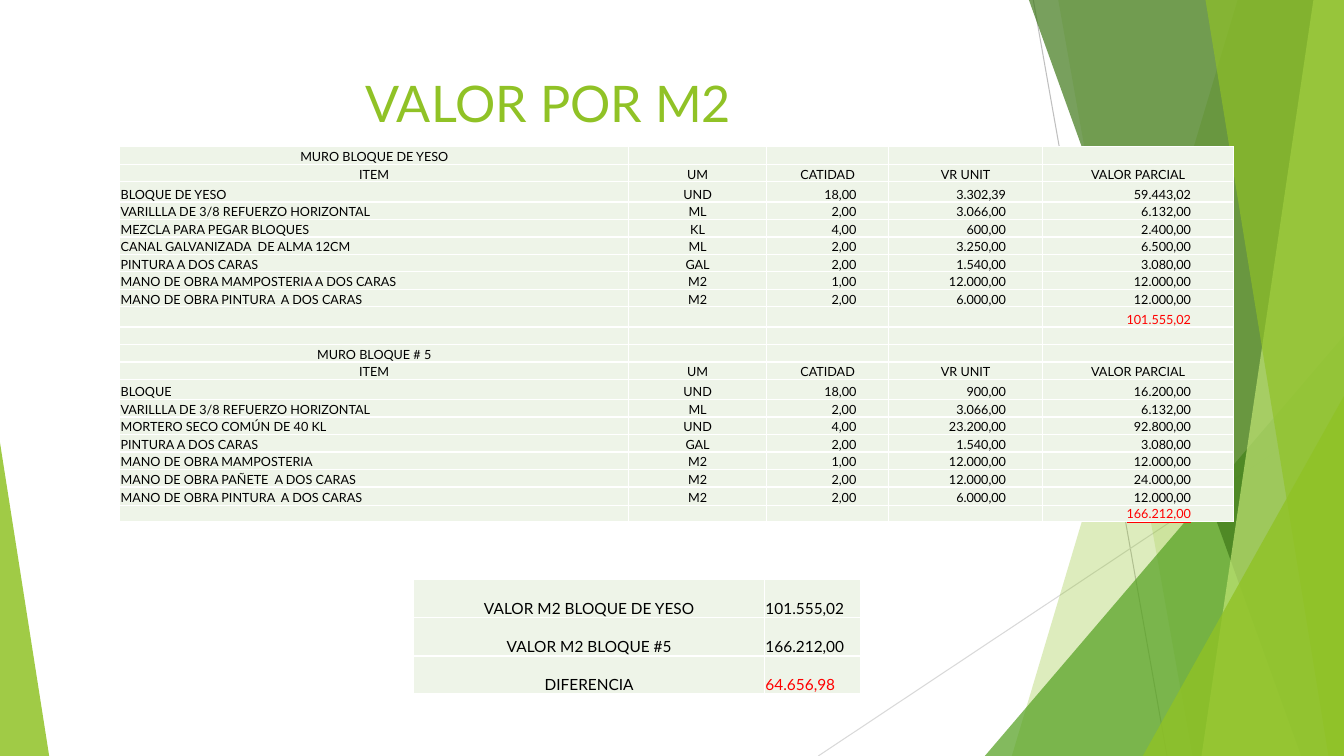
"""Build the slide that compares the cost per square metre of two wall types."""
from lxml.etree import SubElement
from pptx import Presentation
from pptx.dml.color import RGBColor
from pptx.enum.shapes import MSO_CONNECTOR, MSO_SHAPE
from pptx.enum.text import MSO_ANCHOR, PP_ALIGN
from pptx.oxml.ns import qn
from pptx.util import Cm, Pt

GREEN, RED, BLACK, PALE = "90C226", "FF0000", "000000", "EEF4E8"
WIDTH, HEIGHT = 33.87, 19.05
LEFT, CENTER, RIGHT = PP_ALIGN.LEFT, PP_ALIGN.CENTER, PP_ALIGN.RIGHT


def colour(hex_code):
    return RGBColor.from_string(hex_code)


def write_cell(cell, text, size, align, ink=BLACK, inset=0.02, underline=False):
    cell.fill.solid()
    cell.fill.fore_color.rgb = colour(PALE)
    cell_format = {"vertical_anchor": MSO_ANCHOR.BOTTOM, "margin_left": Cm(0.02),
                   "margin_right": Cm(inset), "margin_top": Cm(0.02), "margin_bottom": 0}
    for attribute, value in cell_format.items():
        setattr(cell, attribute, value)
    paragraph = cell.text_frame.paragraphs[0]
    paragraph.alignment = align
    if not text:
        paragraph._p.get_or_add_endParaRPr().set("sz", str(size * 100))
        return
    run = paragraph.add_run()
    run.text = text
    run.font.color.rgb = colour(ink)
    for attribute, value in {"name": "Lato", "size": Pt(size), "underline": underline}.items():
        setattr(run.font, attribute, value)


presentation = Presentation()
presentation.slide_width, presentation.slide_height = Cm(WIDTH), Cm(HEIGHT)
slide = presentation.slides.add_slide(presentation.slide_layouts[5])
shapes = slide.shapes

for x1, y1, x2, y2, ink in [(26.04, 0, 29.41, HEIGHT, "BFBFBF"),
                            (WIDTH, 10.24, 20.62, HEIGHT, "D9D9D9")]:
    ray = shapes.add_connector(MSO_CONNECTOR.STRAIGHT, Cm(x1), Cm(y1), Cm(x2), Cm(y2))
    ray.line.color.rgb = colour(ink)
    ray.line.width = Pt(0.75)
    SubElement(ray._element.spPr, qn("a:effectLst"))

facets = [
    ("band", (31.19, 25.5), GREEN, 30),
    ("band", (26.67, 30.05), GREEN, 20),
    ("triangle", (24.82, 8.46, 9.05, 1), "54A021", 72),
    ("band", (25.93, 32.79), "3F7819", 70),
    ("band", (33.1, 30.28), "C0E474", 70),
    ("band", (30.38, 33.48), GREEN, 65),
    ("triangle", (28.8, 9.98, 5.07, 1), GREEN, 80),
    ("triangle", (0, 11.15, 1.24, 0), GREEN, 85),
]
for kind, geometry, tint, opacity in facets:
    if kind == "band":
        top_x, bottom_x = geometry
        outline = shapes.build_freeform(Cm(top_x), 0)
        outline.add_line_segments([(Cm(WIDTH), 0), (Cm(WIDTH), Cm(HEIGHT)),
                                   (Cm(bottom_x), Cm(HEIGHT))], close=True)
        facet = outline.convert_to_shape()
    else:
        x, y, span, apex = geometry
        facet = shapes.add_shape(MSO_SHAPE.ISOSCELES_TRIANGLE,
                                 Cm(x), Cm(y), Cm(span), Cm(HEIGHT - y))
        facet.adjustments[0] = apex
    facet.shadow.inherit = False
    facet.line.fill.background()
    facet.fill.solid()
    facet.fill.fore_color.rgb = colour(tint)
    tint_node = facet._element.spPr.find(".//" + qn("a:srgbClr"))
    SubElement(tint_node, qn("a:alpha"), val=str(opacity * 1000))

heading = shapes.title
for attribute, value in {"left": Cm(1.88), "top": Cm(1.7),
                         "width": Cm(23.88), "height": Cm(3.66)}.items():
    setattr(heading, attribute, value)
heading.text_frame.text = "VALOR POR M2"
heading.text_frame.vertical_anchor = MSO_ANCHOR.TOP
heading_line = heading.text_frame.paragraphs[0]
heading_line.alignment = CENTER
heading_font = heading_line.runs[0].font
heading_font.name, heading_font.size = "Lato", Pt(36)
heading_font.color.rgb = colour(GREEN)

walls = [
    ("MURO BLOQUE DE YESO", [
        ("BLOQUE DE YESO", "UND", "18,00", "3.302,39", "59.443,02"),
        ("VARILLLA DE 3/8 REFUERZO HORIZONTAL", "ML", "2,00", "3.066,00", "6.132,00"),
        ("MEZCLA PARA PEGAR BLOQUES", "KL", "4,00", "600,00", "2.400,00"),
        ("CANAL GALVANIZADA  DE ALMA 12CM", "ML", "2,00", "3.250,00", "6.500,00"),
        ("PINTURA A DOS CARAS", "GAL", "2,00", "1.540,00", "3.080,00"),
        ("MANO DE OBRA MAMPOSTERIA A DOS CARAS", "M2", "1,00", "12.000,00", "12.000,00"),
        ("MANO DE OBRA PINTURA  A DOS CARAS", "M2", "2,00", "6.000,00", "12.000,00"),
    ], "101.555,02"),
    ("MURO BLOQUE # 5", [
        ("BLOQUE", "UND", "18,00", "900,00", "16.200,00"),
        ("VARILLLA DE 3/8 REFUERZO HORIZONTAL", "ML", "2,00", "3.066,00", "6.132,00"),
        ("MORTERO SECO COMÚN DE 40 KL", "UND", "4,00", "23.200,00", "92.800,00"),
        ("PINTURA A DOS CARAS", "GAL", "2,00", "1.540,00", "3.080,00"),
        ("MANO DE OBRA MAMPOSTERIA", "M2", "1,00", "12.000,00", "12.000,00"),
        ("MANO DE OBRA PAÑETE  A DOS CARAS", "M2", "2,00", "12.000,00", "24.000,00"),
        ("MANO DE OBRA PINTURA  A DOS CARAS", "M2", "2,00", "6.000,00", "12.000,00"),
    ], "166.212,00"),
]
blank = ("",) * 5
headers = ("ITEM", "UM", "CATIDAD", "VR UNIT", "VALOR PARCIAL")
cost_rows = []
for wall, items, total in walls:
    if cost_rows:
        cost_rows.append(("blank", blank))
    cost_rows += [("heading", (wall,) + blank[1:]), ("heading", headers)]
    cost_rows += [("item", item) for item in items]
    cost_rows.append(("total", blank[1:] + (total,)))

cost_widths = [12.82, 3.48, 3.07, 3.89, 4.8]
cost_heights = [0.44] * len(cost_rows)
for row, height in {2: 0.51, 9: 0.51, 13: 0.51, 19: 0.46, 20: 0.41}.items():
    cost_heights[row] = height
summary_rows = [("VALOR M2 BLOQUE DE YESO", "101.555,02"),
                ("VALOR M2 BLOQUE #5", "166.212,00"),
                ("DIFERENCIA", "64.656,98")]

grids = []
for x, y, widths, heights in [(3.02, 3.7, cost_widths, cost_heights),
                              (10.43, 14.61, [8.84, 2.41], [0.96] * 3)]:
    grid = shapes.add_table(len(heights), len(widths), Cm(x), Cm(y),
                            Cm(sum(widths)), Cm(sum(heights))).table
    grid.first_row = grid.horz_banding = False
    for column, width in zip(grid.columns, widths):
        column.width = Cm(width)
    for row, height in zip(grid.rows, heights):
        row.height = Cm(height)
    grids.append(grid)
costs, summary = grids

item_aligns = [LEFT, CENTER, RIGHT, RIGHT, RIGHT]
item_insets = [0.02, 0.02, 0.81, 0.93, 1.07]
for row, (kind, texts) in enumerate(cost_rows):
    for column, text in enumerate(texts):
        is_total = kind == "total"
        is_heading = kind == "heading"
        write_cell(costs.cell(row, column), text, 9,
                   CENTER if is_heading else item_aligns[column],
                   RED if is_total else BLACK,
                   0.02 if is_heading else item_insets[column], is_total)

for row, (label, amount) in enumerate(summary_rows):
    write_cell(summary.cell(row, 0), label, 11, CENTER)
    write_cell(summary.cell(row, 1), amount, 11, LEFT, RED if label == "DIFERENCIA" else BLACK)

presentation.save("out.pptx")
